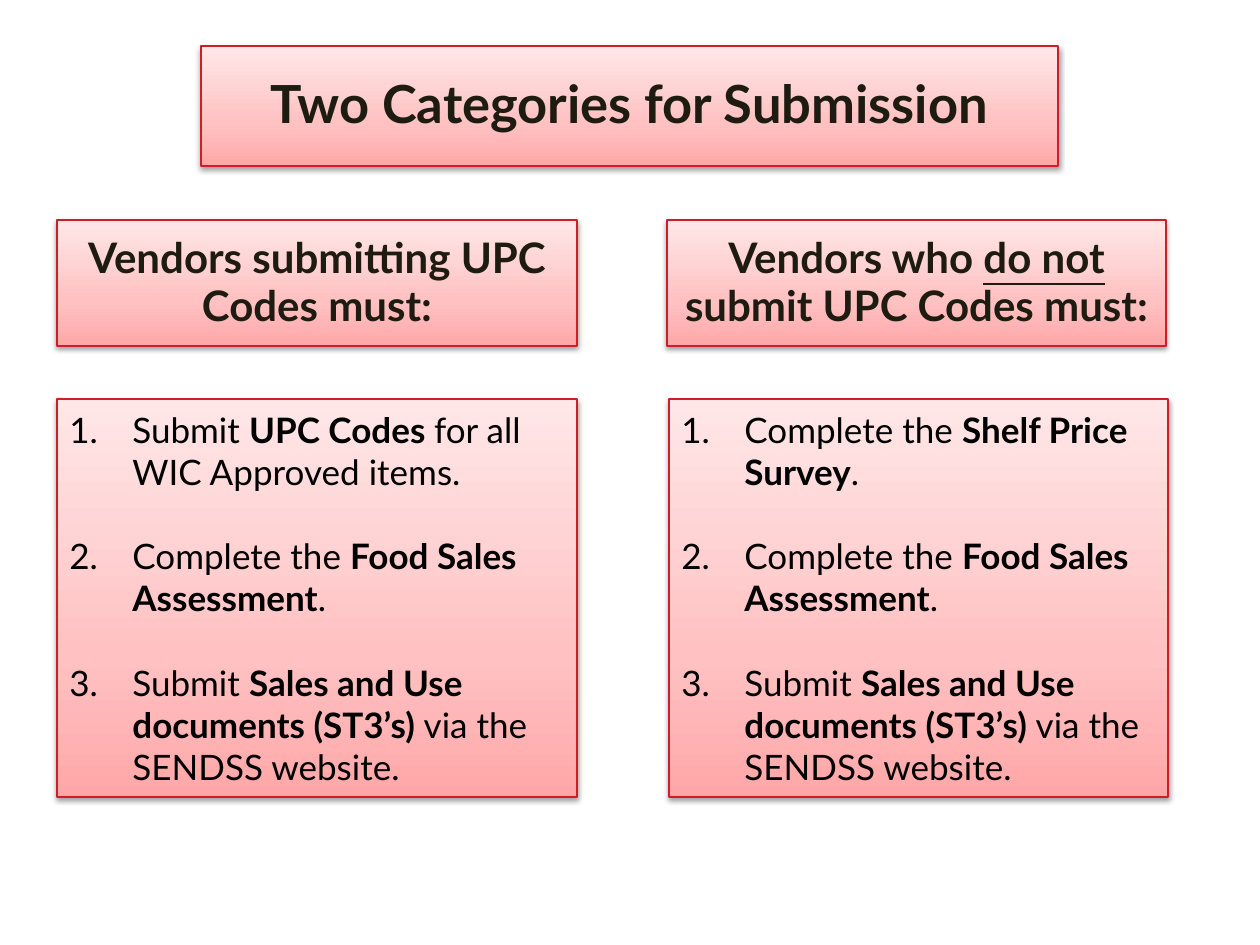
from copy import deepcopy

from lxml.etree import SubElement
from pptx import Presentation
from pptx.dml.color import RGBColor
from pptx.enum.shapes import MSO_SHAPE
from pptx.enum.text import MSO_ANCHOR, MSO_AUTO_SIZE, PP_ALIGN
from pptx.oxml.ns import qn
from pptx.util import Emu, Inches, Pt

PX = 914400 / 126
COLORS = {"heading": "1E1C11", "body": "000000", "border": "CE1F29", "shadow": "000000"}
GRADIENT = [(0, "FFA7A8"), (0.35, "FFC1C2"), (1, "FFE7E8")]


def style_panel(panel, box):
    """Place the panel and give it the red gradient, border, shadow and text frame."""
    panel.left, panel.top, panel.width, panel.height = [Emu(round(v * PX)) for v in box]
    panel.fill.gradient()
    panel.fill.gradient_angle = 90
    properties = panel._element.spPr
    stops = properties.find(qn("a:gradFill")).find(qn("a:gsLst"))
    stops.append(deepcopy(stops[0]))
    for stop, (position, color) in zip(panel.fill.gradient_stops, GRADIENT):
        stop.position = position
        stop.color.rgb = RGBColor.from_string(color)
    panel.line.color.rgb = RGBColor.from_string(COLORS["border"])
    panel.line.width = Pt(0.75)
    panel.shadow.inherit = False
    shadow = SubElement(properties.find(qn("a:effectLst")), qn("a:outerShdw"),
                        blurRad=str(Pt(3.1)), dist=str(Pt(1.6)), dir="5400000", rotWithShape="0")
    tint = SubElement(shadow, qn("a:srgbClr"), val=COLORS["shadow"])
    SubElement(tint, qn("a:alpha"), val="38000")
    frame = panel.text_frame
    frame.word_wrap = True
    frame.auto_size = MSO_AUTO_SIZE.NONE
    frame.vertical_anchor = MSO_ANCHOR.MIDDLE
    return frame


def add_run(paragraph, text, size, color, bold, underline=False):
    run = paragraph.add_run()
    run.text = text
    font = run.font
    font.name, font.size, font.bold = "Lato", Pt(size), bold
    font.color.rgb = RGBColor.from_string(COLORS[color])
    if underline:
        font.underline = True


prs = Presentation()
prs.slide_width, prs.slide_height = Inches(10), Inches(7.5)
slide = prs.slides.add_slide(prs.slide_layouts[5])
shapes = slide.shapes

# Each step is a list of (text, bold) runs; the last two steps apply to every vendor.
shared_steps = [
    [("Complete the ", False), ("Food Sales Assessment", True), (".", False)],
    [("Submit ", False), ("Sales and Use documents (ST3’s) ", True),
     ("via the SENDSS website.", False)],
]
categories = [
    {"heading_left": 57, "steps_left": 57, "width": 520,
     "heading": [("Vendors submitting UPC Codes must:", False)],
     "first_step": [("Submit ", False), ("UPC Codes ", True),
                    ("for all WIC Approved items.", False)]},
    {"heading_left": 667, "steps_left": 669, "width": 499,
     "heading": [("Vendors who ", False), ("do not ", True), ("submit UPC Codes must:", False)],
     "first_step": [("Complete the ", False), ("Shelf Price Survey", True), (".", False)]},
]

# Title and category headings
headings = [(shapes.title, (201, 46, 857, 120), 30, [("Two Categories for Submission", False)])]
for category in categories:
    box = (category["heading_left"], 220, category["width"], 126)
    heading = shapes.add_shape(MSO_SHAPE.RECTANGLE, 0, 0, 0, 0)
    headings.append((heading, box, 24, category["heading"]))

for heading, box, size, runs in headings:
    frame = style_panel(heading, box)
    frame.margin_left = frame.margin_right = 0
    frame.margin_top = frame.margin_bottom = Inches(0.05)
    paragraph = frame.paragraphs[0]
    paragraph.alignment = PP_ALIGN.CENTER
    paragraph.line_spacing = 0.95
    for text, underline in runs:
        add_run(paragraph, text, size, "heading", True, underline)

# Numbered steps
for category in categories:
    steps_panel = shapes.add_shape(MSO_SHAPE.FLOWCHART_PROCESS, 0, 0, 0, 0)
    frame = style_panel(steps_panel, (category["steps_left"], 399, category["width"], 398))
    for index, step in enumerate([category["first_step"], *shared_steps]):
        paragraph = frame.add_paragraph() if index else frame.paragraphs[0]
        paragraph.alignment = PP_ALIGN.LEFT
        if index:
            paragraph.space_before = Pt(24)
        indent = paragraph._p.get_or_add_pPr()
        indent.set("marL", str(Inches(0.5)))
        indent.set("indent", str(-Inches(0.5)))
        SubElement(indent, qn("a:buFont"), typeface="+mj-lt")
        SubElement(indent, qn("a:buAutoNum"), type="arabicPeriod")
        for text, bold in step:
            add_run(paragraph, text, 20, "body", bold)

prs.save("out.pptx")
